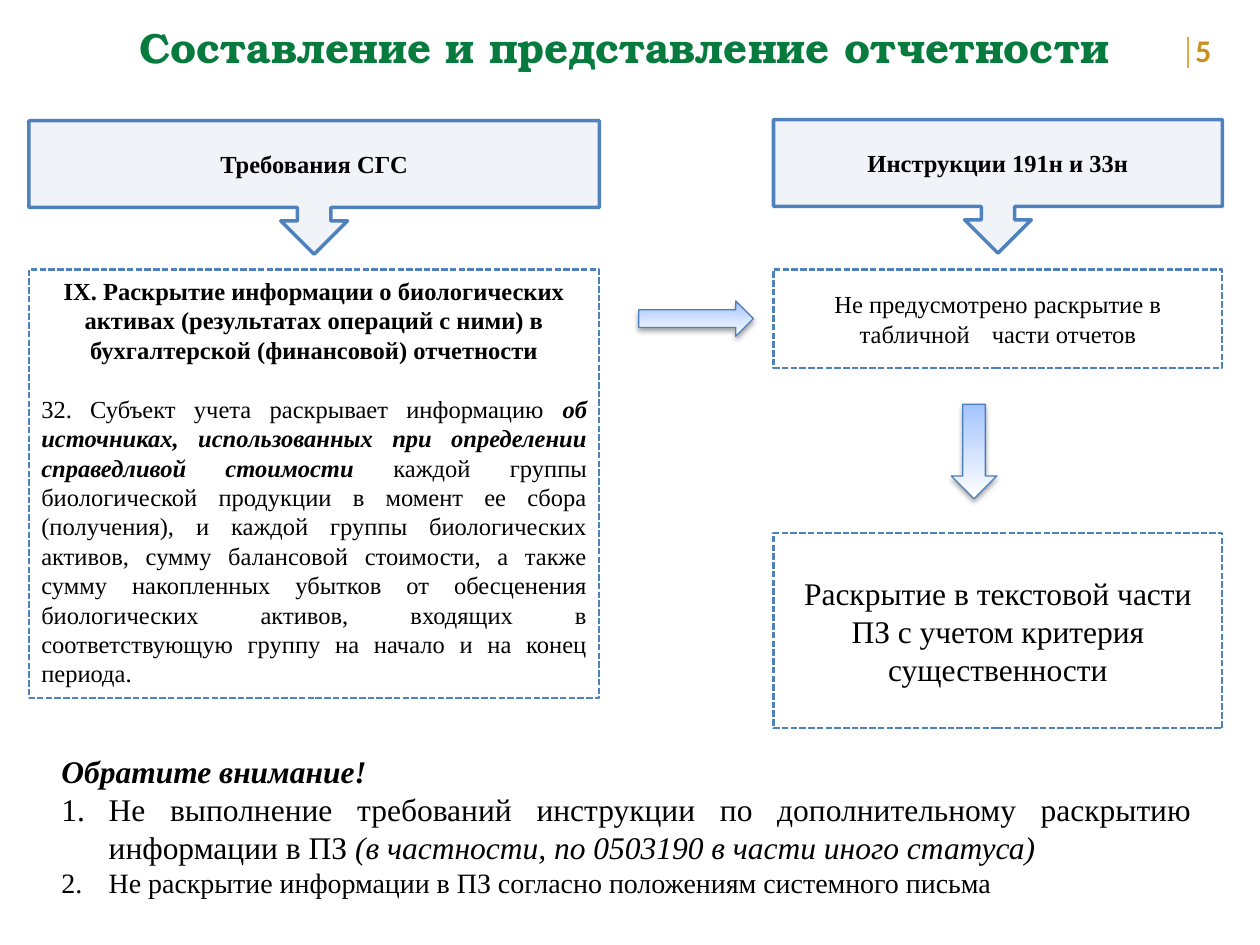
"""Build the slide on preparing and presenting reports."""
import lxml.etree
import pptx
import pptx.dml.color
import pptx.enum.dml
import pptx.enum.shapes
import pptx.enum.text
import pptx.oxml.ns
import pptx.util

Pt = pptx.util.Pt
SHAPES = pptx.enum.shapes.MSO_SHAPE
ALIGN = pptx.enum.text.PP_ALIGN
ANCHOR = pptx.enum.text.MSO_ANCHOR
qn = pptx.oxml.ns.qn

THEME = {
    "title_font": "TeX Gyre Bonum", "number_font": "Calibri", "body_font": "Times New Roman",
    "title": 24, "large": 18, "medium": 16, "body": 14,
    "green": "077A3E", "gold": "C79023", "rule": "DEAA46", "black": "000000",
    "border": "4F81BD", "header": "DCE6F2", "arrow_border": "4B7EBC",
    "arrow_from": "FFFFFF", "arrow_to": "A4C4FF",
}

TITLE = "Составление и представление отчетности"
PAGE_NUMBER = "5"
HEADERS = ["Требования СГС", "Инструкции 191н и 33н"]
REQUIREMENT_HEADING = [
    "IX. Раскрытие информации о биологических",
    "активах (результатах операций с ними) в бухгалтерской (финансовой) отчетности",
]
REQUIREMENT = [
    ("32. Субъект учета раскрывает информацию ", ""),
    ("об источниках, использованных при определении справедливой стоимости ", "bi"),
    ("каждой группы биологической продукции в момент ее сбора (получения), и каждой группы "
     "биологических активов, сумму балансовой стоимости, а также сумму накопленных убытков "
     "от обесценения биологических активов, входящих в соответствующую группу на начало "
     "и на конец периода.", ""),
]
TABLE_PART = "Не предусмотрено раскрытие в табличной\t части отчетов"
TEXT_PART = "Раскрытие в текстовой части ПЗ с учетом критерия существенности"
ATTENTION = "Обратите внимание!"
WARNINGS = [
    ([("Не выполнение требований инструкции по дополнительному раскрытию информации в ПЗ ", ""),
      ("(в частности, по 0503190 в части иного статуса)", "i")], "large"),
    ([("Не раскрытие информации в ПЗ согласно положениям системного письма", "")], "medium"),
]

COLUMNS = [(16.5, 326), (442, 256.5)]
HEADER_TOPS = [69, 68.4]
HEADER_HEIGHT = 76.3
BOX_TOP = 154
ARROWS = [
    (SHAPES.RIGHT_ARROW, (365, 172, 65.5, 20.2)),
    (SHAPES.DOWN_ARROW, (543.6, 231, 26, 54)),
]

deck = pptx.Presentation()
deck.slide_width, deck.slide_height = Pt(720), Pt(540)
slide = deck.slides.add_slide(deck.slide_layouts[6])


def color(name):
    """Return a theme colour."""
    return pptx.dml.color.RGBColor.from_string(THEME[name])


def write(holder, text, size="body", font="body_font", ink="black", style="",
          align=ALIGN.CENTER, before=0, indent=0, numbered=False):
    """Add one paragraph made of a string or of (text, style) runs."""
    frame = holder.text_frame
    paragraph = frame.paragraphs[0]
    if paragraph.runs:
        paragraph = frame.add_paragraph()
    paragraph.alignment = align
    if before:
        paragraph.space_before = Pt(before)
    if indent:
        properties = paragraph._p.get_or_add_pPr()
        properties.set("marL", str(Pt(indent)))
        if numbered:
            properties.set("indent", str(-Pt(indent)))
            lxml.etree.SubElement(properties, qn("a:buFont"), typeface=THEME[font])
            lxml.etree.SubElement(properties, qn("a:buAutoNum"), type="arabicPeriod")
    for words, marks in [(text, style)] if isinstance(text, str) else text:
        run = paragraph.add_run()
        run.text = words
        run.font.name = THEME[font]
        run.font.size = Pt(THEME[size])
        run.font.color.rgb = color(ink)
        run.font.bold = "b" in marks
        run.font.italic = "i" in marks


def add_text(place, grow=True):
    """Add a wrapping text box."""
    holder = slide.shapes.add_textbox(*map(Pt, place))
    holder.text_frame.word_wrap = True
    if grow:
        holder.text_frame.auto_size = pptx.enum.text.MSO_AUTO_SIZE.SHAPE_TO_FIT_TEXT
    return holder


def add_outline(kind, place, width, border="border", anchor=ANCHOR.MIDDLE):
    """Add an unfilled outlined shape."""
    shape = slide.shapes.add_shape(kind, *map(Pt, place))
    shape.shadow.inherit = False
    shape.fill.background()
    shape.line.color.rgb = color(border)
    shape.line.width = Pt(width)
    shape.text_frame.word_wrap = True
    shape.text_frame.vertical_anchor = anchor
    return shape


def add_box(column, top, height, anchor=ANCHOR.MIDDLE):
    """Add a dashed box in a column."""
    left, width = COLUMNS[column]
    box = add_outline(SHAPES.RECTANGLE, (left, top, width, height), 1.25, anchor=anchor)
    box.line.dash_style = pptx.enum.dml.MSO_LINE.SQUARE_DOT
    box.line._ln.find(qn("a:prstDash")).set("val", "sysDash")
    return box


def add_header(text, column, top):
    """Add a translucent arrow callout heading a column."""
    left, width = COLUMNS[column]
    header = add_outline(SHAPES.DOWN_ARROW_CALLOUT, (left, top, width, HEADER_HEIGHT), 2)
    header.fill.solid()
    header.fill.fore_color.rgb = color("header")
    tint = header._element.spPr.find(qn("a:solidFill"))[0]
    lxml.etree.SubElement(tint, qn("a:alpha"), val="41000")
    write(header, text, style="b")


def add_arrow(kind, place):
    """Add a gradient block arrow with a soft shadow."""
    arrow = add_outline(kind, place, 0.75, border="arrow_border")
    arrow.fill.gradient()
    arrow.fill.gradient_angle = 90
    for stop, name in zip(arrow.fill.gradient_stops, ("arrow_from", "arrow_to")):
        stop.color.rgb = color(name)
    effects = arrow._element.spPr.find(qn("a:effectLst"))
    shadow = lxml.etree.SubElement(effects, qn("a:outerShdw"), blurRad=str(Pt(3.1)),
                                   dist=str(Pt(1.8)), dir="5400000", rotWithShape="0")
    shade = lxml.etree.SubElement(shadow, qn("a:srgbClr"), val=THEME["black"])
    lxml.etree.SubElement(shade, qn("a:alpha"), val="35000")


write(add_text((59, 8.6, 591, 36)), TITLE, size="title", font="title_font",
      ink="green", style="b", indent=4.5)
write(add_text((676, 14.4, 44, 29), grow=False), PAGE_NUMBER, size="large",
      font="number_font", ink="gold", style="b", align=ALIGN.LEFT)
number_rule = slide.shapes.add_connector(
    pptx.enum.shapes.MSO_CONNECTOR.STRAIGHT, Pt(679), Pt(21), Pt(679), Pt(39))
number_rule.line.color.rgb = color("rule")
number_rule.line.width = Pt(1)
lxml.etree.SubElement(number_rule._element.spPr, qn("a:effectLst"))

requirement_box = add_box(0, BOX_TOP, 245, anchor=ANCHOR.TOP)
for heading in REQUIREMENT_HEADING:
    write(requirement_box, heading, style="b")
write(requirement_box, REQUIREMENT, align=ALIGN.JUSTIFY, before=17)

for column, (header_text, header_top) in enumerate(zip(HEADERS, HEADER_TOPS)):
    add_header(header_text, column, header_top)
write(add_box(1, BOX_TOP, 56.2), TABLE_PART)
for direction, arrow_place in ARROWS:
    add_arrow(direction, arrow_place)
write(add_box(1, 304.6, 111.6), TEXT_PART, size="large")

attention_note = add_text((28, 426.2, 660, 92))
write(attention_note, ATTENTION, size="large", style="bi", align=ALIGN.JUSTIFY)
for warning, warning_size in WARNINGS:
    write(attention_note, warning, size=warning_size, align=ALIGN.JUSTIFY,
          indent=27, numbered=True)

deck.save("out.pptx")
